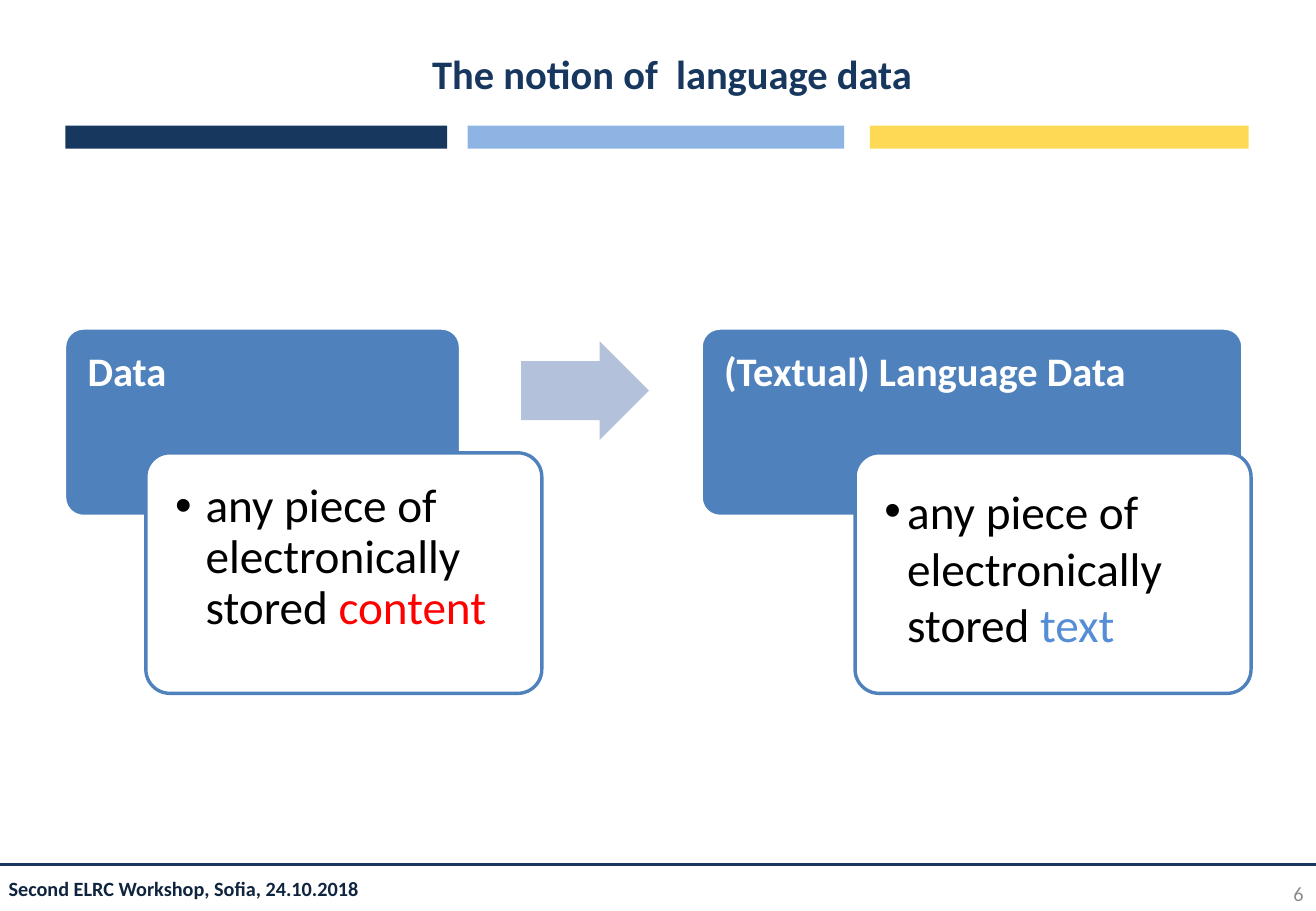
from lxml.etree import SubElement
from pptx import Presentation
from pptx.dml.color import RGBColor
from pptx.enum.shapes import MSO_CONNECTOR as CONN, MSO_SHAPE as SHAPE
from pptx.enum.text import MSO_ANCHOR as ANCHOR, PP_ALIGN as ALIGN
from pptx.oxml.ns import qn
from pptx.util import Cm, Pt

NAVY, BLUE, WHITE = "17375E", "4F81BD", "FFFFFF"
TITLE = "The notion of  language data"
FOOTER = "Second ELRC Workshop, Sofia, 24.10.2018"
PAGE = "6"
BARS = [(1.37, 7.98, NAVY), (9.78, 7.87, "8EB4E3"), (18.19, 7.92, "FED956")]
DEFINITION = "any piece of electronically stored "
TERMS = [
    dict(name="Data", left=1.35, width=8.28, card=3.05,
         key="content", color="FF0000", indent=0.64, spacing=0.9),
    dict(name="(Textual) Language Data", left=14.66, width=11.33, card=17.88,
         key="text", color="558ED5", indent=0.48, spacing=1.0),
]
HEAD_TOP, HEAD_H = 6.86, 3.94
CARD_TOP, CARD_W, CARD_H = 9.47, 8.28, 5.03
ROUNDING = 0.1
CORNER_INSET = 0.29 * ROUNDING


def rgb(hex_color):
    return RGBColor.from_string(hex_color)


def add_shape(kind, left, top, width, height, fill, line=None):
    sp = s.shapes.add_shape(kind, Cm(left), Cm(top), Cm(width), Cm(height))
    sp.shadow.inherit = False
    sp.fill.solid()
    sp.fill.fore_color.rgb = rgb(fill)
    if line:
        sp.line.color.rgb = rgb(line)
        sp.line.width = Pt(2)
    else:
        sp.line.fill.background()
    return sp


def add_rounded(left, top, width, height, fill, line):
    sp = add_shape(SHAPE.ROUNDED_RECTANGLE, left, top, width, height, fill, line)
    sp.adjustments[0] = ROUNDING
    return sp


def add_text(sp, runs, size, bold=False, align=ALIGN.LEFT, anchor=ANCHOR.TOP,
             insets=(0, 0, 0, 0), spacing=1.0, indent=None):
    tf = sp.text_frame
    tf.word_wrap = True
    tf.vertical_anchor = anchor
    tf.margin_left, tf.margin_top, tf.margin_right, tf.margin_bottom = map(Cm, insets)
    p = tf.paragraphs[0]
    p.alignment = align
    p.line_spacing = spacing
    if indent:
        pPr = p._p.get_or_add_pPr()
        pPr.set("marL", str(Cm(indent)))
        pPr.set("indent", str(-Cm(indent)))
        SubElement(pPr, qn("a:buFont"), typeface="Arial")
        SubElement(pPr, qn("a:buChar"), char="•")
    for text, color in runs:
        r = p.add_run()
        r.text = text
        r.font.name = "Calibri"
        r.font.size = Pt(size)
        r.font.bold = bold
        r.font.color.rgb = rgb(color)


prs = Presentation()
prs.slide_width, prs.slide_height = Pt(780), Pt(540)
s = prs.slides.add_slide(prs.slide_layouts[5])

title = s.shapes.title
title.left, title.top, title.width, title.height = map(Cm, (5.38, 0.36, 17.35, 2.34))
add_text(title, [(TITLE, NAVY)], 24, bold=True, align=ALIGN.CENTER, anchor=ANCHOR.MIDDLE)

for left, width, color in BARS:
    add_shape(SHAPE.RECTANGLE, left, 2.63, width, 0.48, color)

for term in TERMS:
    head = add_rounded(term["left"], HEAD_TOP, term["width"], HEAD_H, BLUE, WHITE)
    inset = 0.48 - CORNER_INSET * HEAD_H
    add_text(head, [(term["name"], WHITE)], 24, bold=True,
             insets=(inset, inset, inset, 1.5), spacing=0.9)

    card = add_rounded(term["card"], CARD_TOP, CARD_W, CARD_H, WHITE, BLUE)
    add_text(card, [(DEFINITION, "000000"), (term["key"], term["color"])], 28,
             insets=[0.61 - CORNER_INSET * CARD_H] * 4,
             spacing=term["spacing"], indent=term["indent"])

arrow = add_shape(SHAPE.RIGHT_ARROW, 10.9, 7.14, 2.67, 2.06, "B3C1DB")
arrow.adjustments[0], arrow.adjustments[1] = 0.6, 0.5

rule = s.shapes.add_connector(CONN.STRAIGHT, 0, Cm(18.08), prs.slide_width, Cm(18.08))
rule.line.color.rgb = rgb(NAVY)
rule.line.width = Pt(2.25)
SubElement(rule._element.spPr, qn("a:effectLst"))

footer = s.shapes.add_textbox(Cm(-0.02), Cm(18.29), Cm(12.98), Cm(0.66))
add_text(footer, [(FOOTER, "0F243E")], 12, bold=True,
         insets=(0.2, 0.1, 0.2, 0.1), spacing=0.9)
page = s.shapes.add_textbox(Cm(21.11), Cm(18.17), Cm(6.4), Cm(1.02))
add_text(page, [(PAGE, "8C8C8C")], 12, align=ALIGN.RIGHT, anchor=ANCHOR.MIDDLE,
         insets=(0.25, 0.13, 0.25, 0.13))

prs.save("out.pptx")
